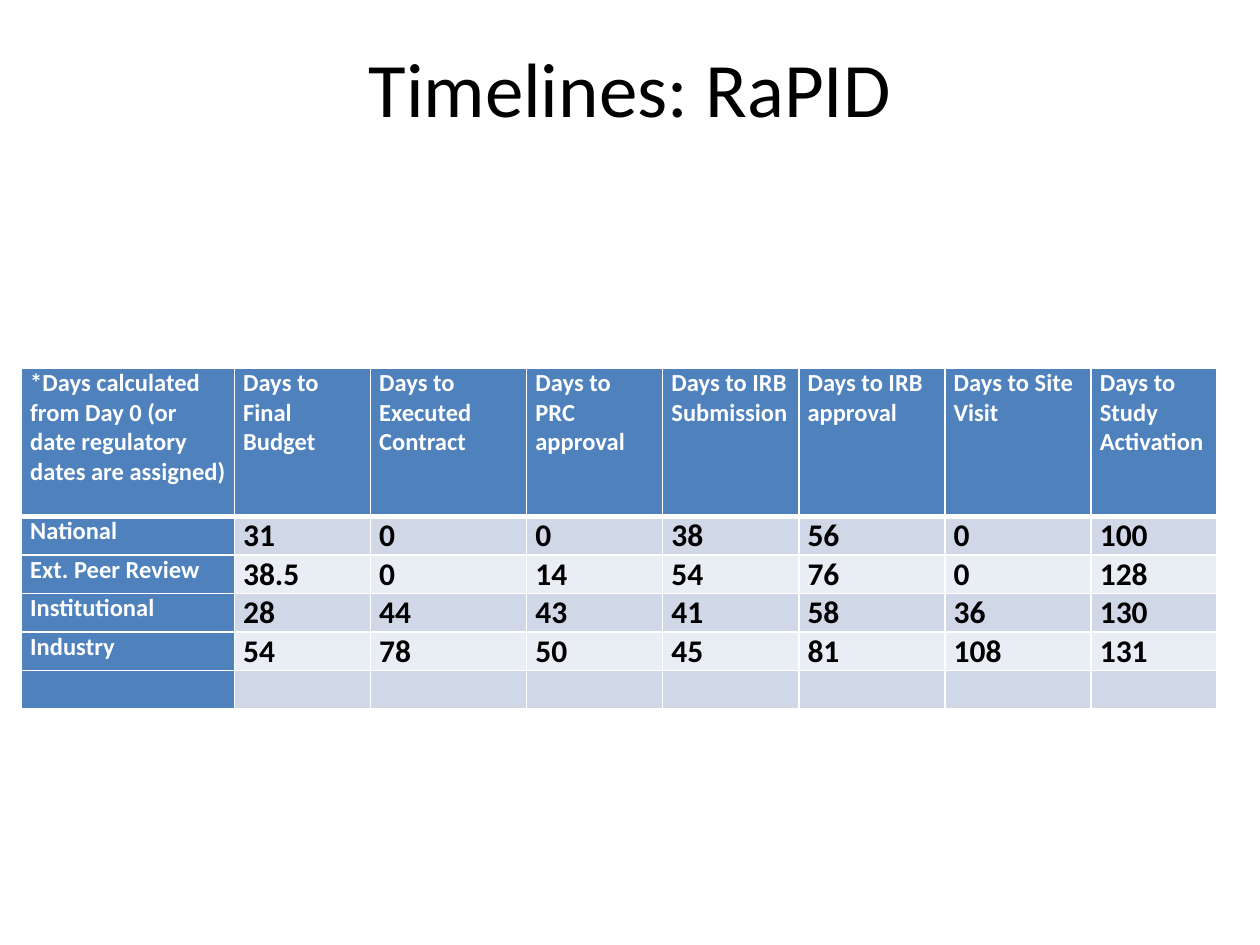
from lxml import etree
from pptx import Presentation
from pptx.dml.color import RGBColor
from pptx.enum.text import MSO_ANCHOR, PP_ALIGN
from pptx.oxml.ns import qn
from pptx.util import Inches, Pt

MIDDLE = MSO_ANCHOR.MIDDLE
CENTER = PP_ALIGN.CENTER
TITLE_ONLY = 5
FONT = "Calibri"
WHITE = RGBColor(0xFF, 0xFF, 0xFF)
BLACK = RGBColor(0x00, 0x00, 0x00)
BLUE = RGBColor(0x4F, 0x81, 0xBD)
BANDS = (RGBColor(0xD0, 0xD8, 0xE8), RGBColor(0xE9, 0xED, 0xF4))

COLUMN_WIDTHS = (1.69, 1.08, 1.24, 1.08, 1.08, 1.16, 1.16, 1)
HEADER_HEIGHT = 1.18
ROW_HEIGHT = 0.3
TIMELINES = (
    ("*Days calculated from Day 0 (or date regulatory dates are assigned)",
     "Days to Final Budget", "Days to Executed Contract",
     "Days to PRC approval", "Days to IRB Submission",
     "Days to IRB approval", "Days to Site Visit",
     "Days to Study Activation"),
    ("National", "31", "0", "0", "38", "56", "0", "100"),
    ("Ext. Peer Review", "38.5", "0", "14", "54", "76", "0", "128"),
    ("Institutional", "28", "44", "43", "41", "58", "36", "130"),
    ("Industry", "54", "78", "50", "45", "81", "108", "131"),
    ("",) * len(COLUMN_WIDTHS),
)


def set_font(para, size, color, bold=False):
    para.font.name = FONT
    para.font.size = Pt(size)
    para.font.color.rgb = color
    para.font.bold = bold


def add_title(page, text):
    title = page.shapes.title
    title.left, title.top = Inches(0.5), Inches(0.06)
    title.width, title.height = Inches(9), Inches(1.25)
    title.text_frame.vertical_anchor = MIDDLE
    para = title.text_frame.paragraphs[0]
    para.text = text
    para.alignment = CENTER
    set_font(para, 44, BLACK)


def set_borders(cell, bottom_width):
    properties = cell._tc.get_or_add_tcPr()
    widths = {"a:lnL": 1, "a:lnR": 1, "a:lnT": 1, "a:lnB": bottom_width}
    for position, (tag, width) in enumerate(widths.items()):
        line = etree.Element(qn(tag), w=str(Pt(width)))
        fill = etree.SubElement(line, qn("a:solidFill"))
        etree.SubElement(fill, qn("a:srgbClr"), val=str(WHITE))
        properties.insert(position, line)


def format_cell(cell, text, fill, size, color, bottom_width):
    cell.margin_left = cell.margin_right = Inches(0.07)
    cell.margin_top = cell.margin_bottom = 0
    cell.fill.solid()
    cell.fill.fore_color.rgb = fill
    para = cell.text_frame.paragraphs[0]
    para.text = text
    set_font(para, size, color, bold=True)
    set_borders(cell, bottom_width)


def add_timeline_table(page):
    height = HEADER_HEIGHT + ROW_HEIGHT * (len(TIMELINES) - 1)
    table = page.shapes.add_table(
        len(TIMELINES), len(COLUMN_WIDTHS), Inches(0.17), Inches(2.92),
        Inches(sum(COLUMN_WIDTHS)), Inches(height)).table
    table.first_col = True
    for column, width in zip(table.columns, COLUMN_WIDTHS):
        column.width = Inches(width)
    for row_index, values in enumerate(TIMELINES):
        is_header = row_index == 0
        table.rows[row_index].height = Inches(HEADER_HEIGHT if is_header else ROW_HEIGHT)
        for column_index, text in enumerate(values):
            is_label = is_header or column_index == 0
            format_cell(
                table.cell(row_index, column_index), text,
                fill=BLUE if is_label else BANDS[(row_index - 1) % 2],
                size=14 if is_label else 18,
                color=WHITE if is_label else BLACK,
                bottom_width=3 if is_header else 1)


def main():
    deck = Presentation()
    deck.slide_width, deck.slide_height = Inches(10), Inches(7.5)
    page = deck.slides.add_slide(deck.slide_layouts[TITLE_ONLY])
    add_title(page, "Timelines: RaPID")
    add_timeline_table(page)
    deck.save("out.pptx")


if __name__ == "__main__":
    main()
